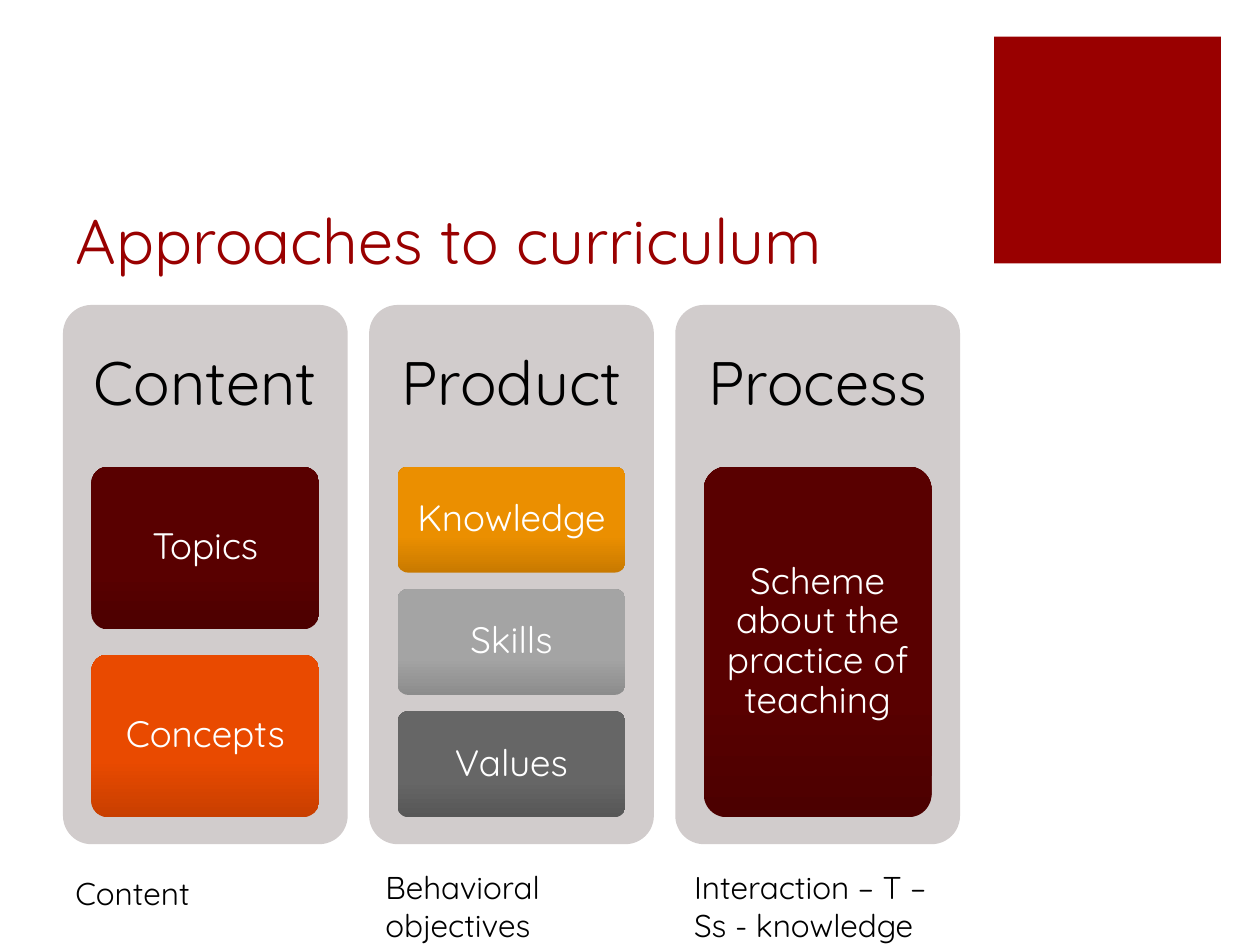
from pptx import Presentation
from pptx.dml.color import RGBColor
from pptx.enum.shapes import MSO_SHAPE
from pptx.enum.text import MSO_ANCHOR, MSO_AUTO_SIZE, PP_ALIGN
from pptx.util import Inches, Pt

FONT = "Quicksand"
COLORS = {"accent": "990000", "panel": "D1CCCC", "black": "000000", "white": "FFFFFF"}
GRADIENTS = {
    "maroon": ("4C0000", "590000"),
    "orange": ("C83F00", "E94A00"),
    "amber": ("C97A00", "EB8F00"),
    "silver": ("8C8C8C", "A4A4A4"),
    "gray": ("575757", "666666"),
}
APPROACHES = [
    ("Content", [("Topics", "maroon"), ("Concepts", "orange")]),
    ("Product", [("Knowledge", "amber"), ("Skills", "silver"), ("Values", "gray")]),
    ("Process", [("Scheme about the practice of teaching", "maroon")]),
]
CAPTIONS = [
    ("Content", (0.5, 6.89, 2.08, 0.4)),
    ("Behavioral objectives", (2.96, 6.84, 2.15, 0.71)),
    ("Interaction – T – Ss - knowledge", (5.41, 6.84, 2.21, 0.71)),
]
PANEL_PITCH = 2.43
GAP_RATIO = 0.154


def inches(box):
    """Turn a left, top, width, height box into lengths."""
    return [Inches(value) for value in box]


def write(holder, text, size, color, align=PP_ALIGN.LEFT, spacing=1.0,
          anchor=MSO_ANCHOR.TOP, margins=(0.1, 0.05)):
    """Write one formatted paragraph into a text holder."""
    frame = holder.text_frame
    frame.text = text
    side, end = (Inches(margin) for margin in margins)
    paragraph = frame.paragraphs[0]
    font = paragraph.runs[0].font
    formats = [
        (frame, {"word_wrap": True, "auto_size": MSO_AUTO_SIZE.NONE,
                 "vertical_anchor": anchor, "margin_left": side,
                 "margin_right": side, "margin_top": end, "margin_bottom": end}),
        (paragraph, {"alignment": align, "line_spacing": spacing}),
        (font, {"name": FONT, "size": Pt(size)}),
    ]
    for target, values in formats:
        for attribute, value in values.items():
            setattr(target, attribute, value)
    font.color.rgb = RGBColor.from_string(COLORS[color])


def add_block(slide, kind, box):
    """Add a shape without line or shadow."""
    block = slide.shapes.add_shape(kind, *inches(box))
    block.shadow.inherit = False
    block.line.fill.background()
    if kind == MSO_SHAPE.ROUNDED_RECTANGLE:
        block.adjustments[0] = 0.1
    return block


def fill_solid(block, color):
    """Fill a shape with one named color."""
    block.fill.solid()
    block.fill.fore_color.rgb = RGBColor.from_string(COLORS[color])


def add_heading(slide, box):
    """Place the slide title in the given box."""
    title = slide.shapes.title
    title.left, title.top, title.width, title.height = inches(box)
    write(title, "Approaches to curriculum", 36, "accent", anchor=MSO_ANCHOR.BOTTOM)


def add_item(slide, box, text, gradient):
    """Add one gradient card that darkens toward its lower edge."""
    item = add_block(slide, MSO_SHAPE.ROUNDED_RECTANGLE, box)
    item.fill.gradient()
    item.fill.gradient_angle = 90
    stops = zip(item.fill.gradient_stops, (0, 0.35), GRADIENTS[gradient])
    for stop, position, color in stops:
        stop.position = position
        stop.color.rgb = RGBColor.from_string(color)
    write(item, text, 21, "white", PP_ALIGN.CENTER, 0.9, MSO_ANCHOR.MIDDLE)


def add_approach(slide, box, name, items):
    """Add a panel with its name above evenly stacked items."""
    left, top, width, height = box
    panel = add_block(slide, MSO_SHAPE.ROUNDED_RECTANGLE, box)
    fill_solid(panel, "panel")
    header = slide.shapes.add_textbox(*inches((left, top, width, height * 0.3)))
    write(header, name, 35, "black", PP_ALIGN.CENTER, 0.9, MSO_ANCHOR.MIDDLE,
          (0.15, 0.15))
    count = len(items)
    item_height = height * 0.65 / (count + (count - 1) * GAP_RATIO)
    for index, (text, gradient) in enumerate(items):
        item_top = top + height * 0.3 + index * item_height * (1 + GAP_RATIO)
        item_box = (left + width * 0.1, item_top, width * 0.8, item_height)
        add_item(slide, item_box, text, gradient)


def add_caption(slide, box, text):
    """Add a caption below a panel."""
    caption = slide.shapes.add_textbox(*inches(box))
    write(caption, text, 18, "black")


def main():
    """Build and save the slide."""
    deck = Presentation()
    deck.slide_width, deck.slide_height = Inches(10), Inches(7.5)
    slide = deck.slides.add_slide(deck.slide_layouts[5])
    fill_solid(add_block(slide, MSO_SHAPE.RECTANGLE, (7.89, 0.29, 1.8, 1.8)), "accent")
    add_heading(slide, (0.5, 1, 7.12, 1.25))
    for index, (name, items) in enumerate(APPROACHES):
        add_approach(slide, (0.5 + index * PANEL_PITCH, 2.42, 2.26, 4.28), name, items)
    for text, box in CAPTIONS:
        add_caption(slide, box, text)
    deck.save("out.pptx")


if __name__ == "__main__":
    main()
